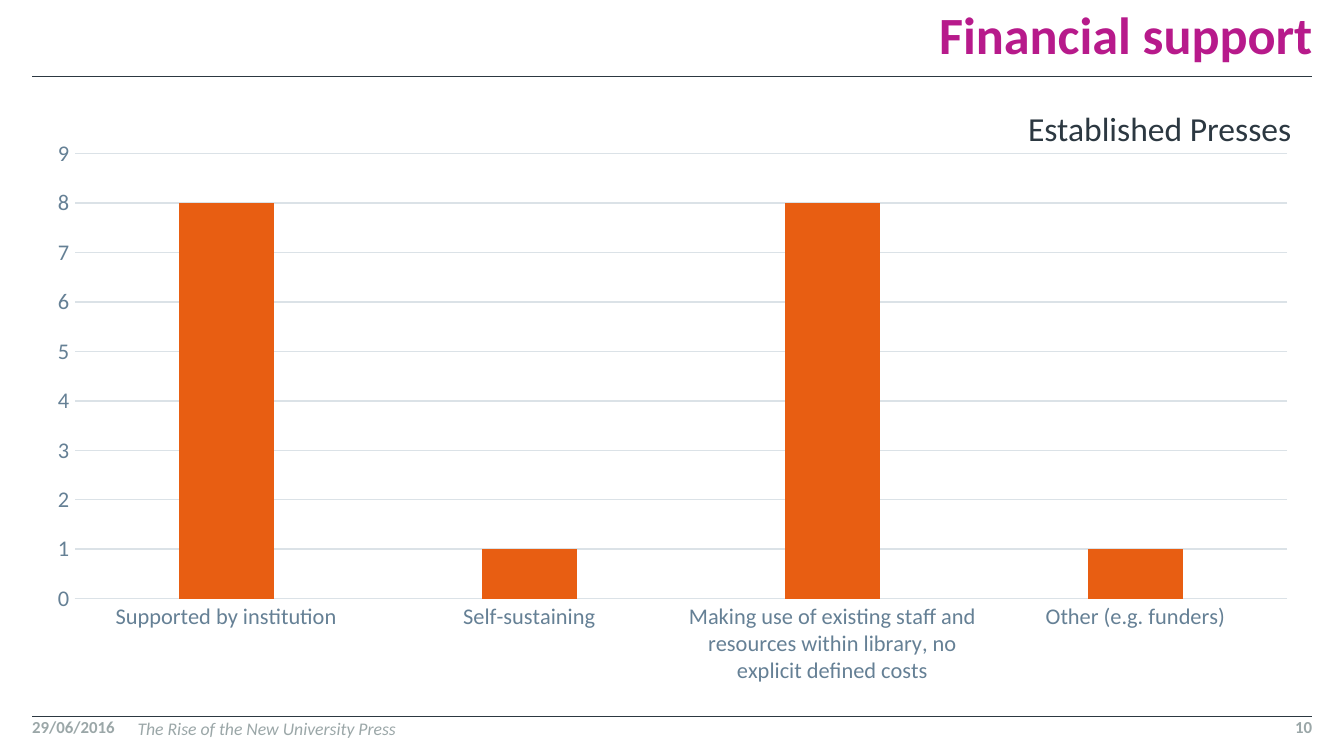
from lxml.etree import SubElement as Sub
from pptx import Presentation
from pptx.chart.data import CategoryChartData as Data
from pptx.dml.color import RGBColor as Rgb
from pptx.enum.chart import XL_CHART_TYPE as Kind, XL_TICK_MARK as Tick
from pptx.enum.shapes import MSO_CONNECTOR as Line
from pptx.enum.text import MSO_ANCHOR as Anchor, PP_ALIGN as Align
from pptx.oxml.ns import qn
from pptx.util import Cm, Pt

FONT = "Calibri"
HUES = {"ink": "2C3841", "pink": "B71A8B", "bar": "E85E12",
        "axis": "658095", "grid": "DBE2E7", "foot": "9BA7A8"}


def style(font, size, hue):
    font.name = FONT
    font.size = Pt(size)
    font.color.rgb = Rgb.from_string(HUES[hue])


def label(words, place, size, hue, bold=False, slant=False, side=Align.LEFT,
          anchor=Anchor.TOP, pad=(0, 0), wrap=True, lead=None):
    box = slide.shapes.add_textbox(*[Cm(n) for n in place])
    frame = box.text_frame
    frame.word_wrap = wrap
    frame.vertical_anchor = anchor
    frame.margin_left = frame.margin_right = Cm(pad[0])
    frame.margin_top = frame.margin_bottom = Cm(pad[1])
    para = frame.paragraphs[0]
    para.alignment = side
    para.line_spacing = lead
    run = para.add_run()
    run.text = words
    style(run.font, size, hue)
    run.font.bold = bold
    run.font.italic = slant


deck = Presentation()
deck.slide_width, deck.slide_height = Cm(25.4), Cm(14.29)
slide = deck.slides.add_slide(deck.slide_layouts[6])

left, right = 0.61, 24.8
foot = 13.54
for y in (1.45, foot):
    rule = slide.shapes.add_connector(Line.STRAIGHT, Cm(left), Cm(y), Cm(right), Cm(y))
    rule.line.width = Pt(0.5)
    rule.line.color.rgb = Rgb.from_string(HUES["ink"])
    Sub(rule._element.spPr, qn("a:effectLst"))

label("Financial support", (7.7, 0, 17.1, 1.24), 28, "pink", bold=True,
      side=Align.RIGHT, anchor=Anchor.BOTTOM, lead=0.9)

data = Data()
data.categories = [
    "Supported by institution",
    "Self-sustaining",
    "Making use of existing staff and resources within library, no explicit defined costs",
    "Other (e.g. funders)",
]
data.add_series("Series 1", (8, 1, 8, 1))
chart = slide.shapes.add_chart(Kind.COLUMN_CLUSTERED, Cm(left), Cm(2.44),
                               Cm(24.2), Cm(10.7), data).chart
chart.has_legend = False
chart.has_title = False
style(chart.font, 10, "ink")

plot = chart.plots[0]
plot.gap_width = 219
plot.overlap = -27
plot.vary_by_categories = False
fill = plot.series[0].format.fill
fill.solid()
fill.fore_color.rgb = Rgb.from_string(HUES["bar"])

cats, vals = chart.category_axis, chart.value_axis
for axis in (cats, vals):
    axis.major_tick_mark = axis.minor_tick_mark = Tick.NONE
    style(axis.tick_labels.font, 12, "axis")
vals.minimum_scale, vals.maximum_scale, vals.major_unit = 0, 9, 1
vals.format.line.fill.background()
for line in (cats.format.line, vals.major_gridlines.format.line):
    line.width = Pt(0.75)
    line.color.rgb = Rgb.from_string(HUES["grid"])

label("29/06/2016", (left, foot, 2, 0.46), 9, "foot", bold=True)
label("The Rise of the New University Press", (2.6, foot, 20.2, 0.46), 9.5, "foot",
      slant=True, pad=(0, 0.03))
label("10", (22.8, foot, 2, 0.46), 9, "foot", bold=True, side=Align.RIGHT)
label("Established Presses", (19.23, 1.96, 5.58, 0.97), 18, "ink",
      anchor=Anchor.MIDDLE, pad=(0.2, 0.1), wrap=False, lead=0.99)

deck.save("out.pptx")
